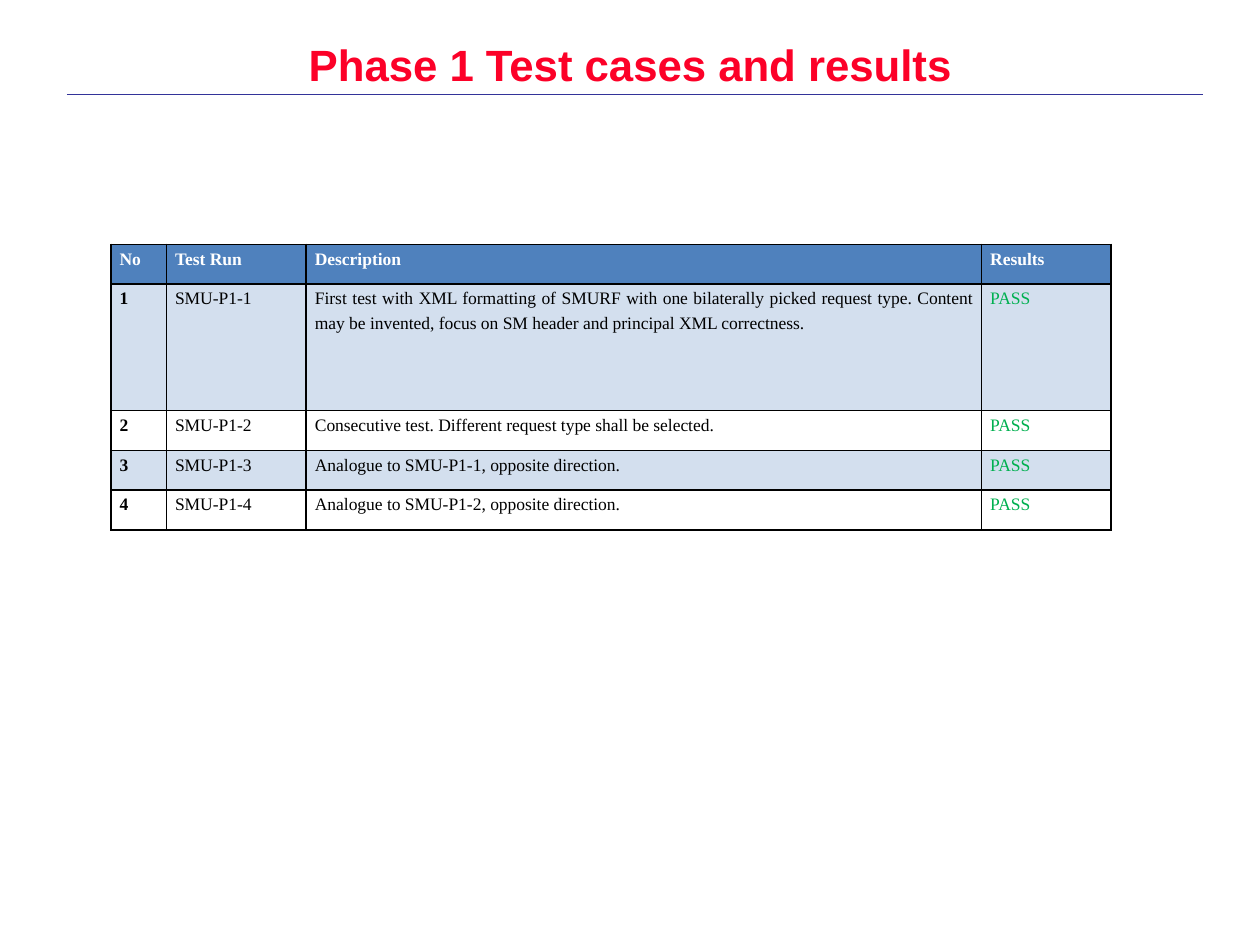
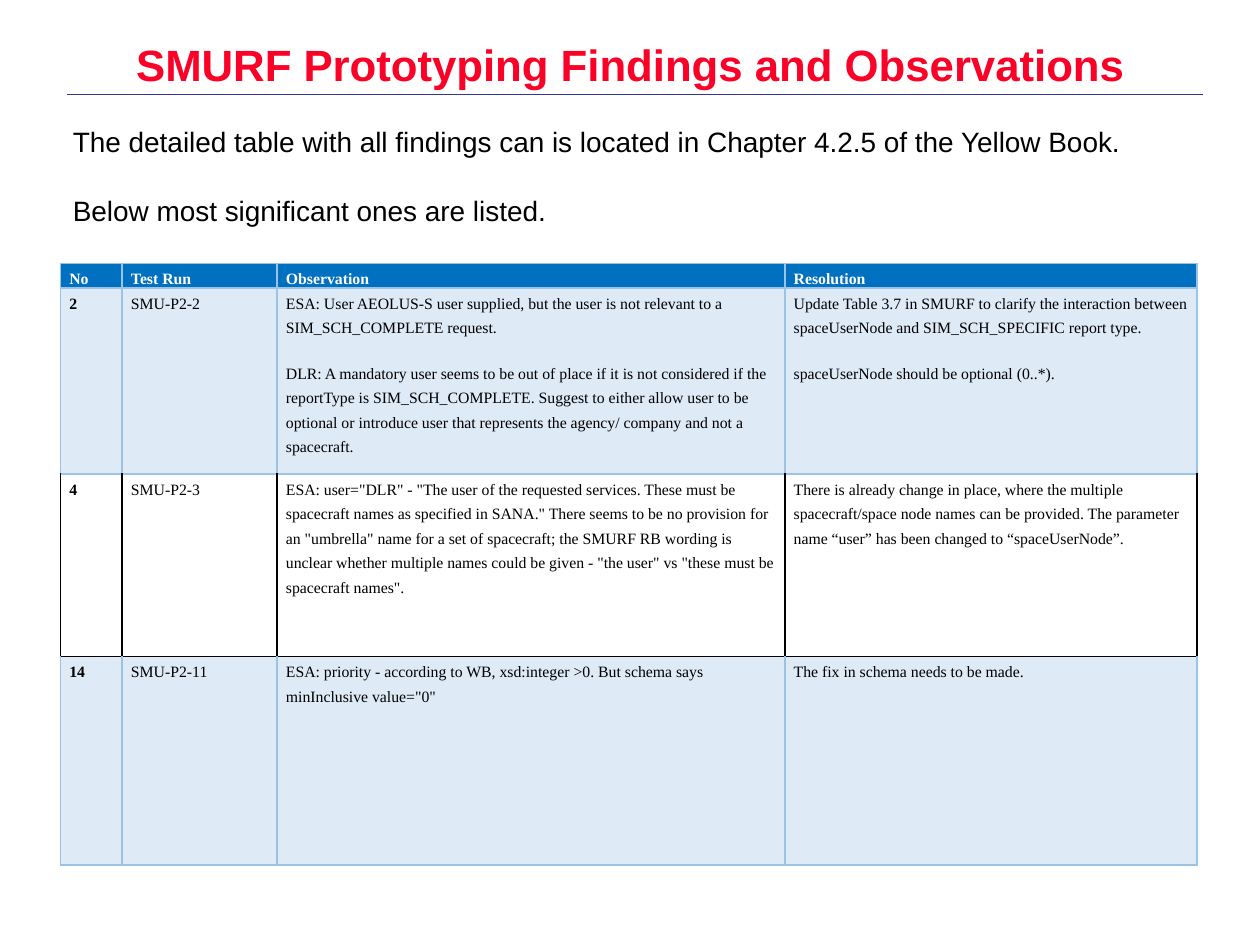
from dataclasses import dataclass
from typing import Optional

from lxml import etree
from pptx import Presentation
from pptx import util as u
from pptx.dml.color import RGBColor
from pptx.enum import shapes, text
from pptx.oxml import ns

SLIDE_WIDTH = u.Inches(10)
SLIDE_HEIGHT = u.Inches(7.5)

RED = RGBColor(0xFC, 0x01, 0x28)
NAVY = RGBColor(0x33, 0x33, 0x99)
BLACK = RGBColor(0x00, 0x00, 0x00)
WHITE = RGBColor(0xFF, 0xFF, 0xFF)
GREEN = RGBColor(0x00, 0xB0, 0x50)
STEEL_BLUE = RGBColor(0x4F, 0x81, 0xBD)
PALE_STEEL = RGBColor(0xD3, 0xDF, 0xEE)
STRONG_BLUE = RGBColor(0x00, 0x70, 0xC0)
SKY_BLUE = RGBColor(0x9C, 0xC2, 0xE5)
PALE_SKY = RGBColor(0xDE, 0xEA, 0xF6)

HEADING_FONT = "Arial"
TABLE_FONT = "Times New Roman"
LEFT = text.PP_ALIGN.LEFT
JUSTIFY = text.PP_ALIGN.JUSTIFY


@dataclass(frozen=True)
class TableStyle:
    font_size: int
    header_fill: RGBColor
    band_fill: RGBColor
    band_border: RGBColor
    plain_border: RGBColor
    alignments: tuple[text.PP_ALIGN, ...]
    last_column_color: RGBColor = BLACK


@dataclass(frozen=True)
class TableSpec:
    """Places and sizes are percentages of the slide's width or height."""
    left: float
    top: float
    columns: tuple[float, ...]
    rows: tuple[float, ...]
    style: TableStyle
    records: tuple[tuple[str, ...], ...]


@dataclass(frozen=True)
class PageSpec:
    title: str
    table: TableSpec
    intro: Optional[str] = None


TEST_RESULTS = TableSpec(
    left=8.8, top=25.87,
    columns=(4.4, 11.1, 53.6, 10.3),
    rows=(4.2, 13.4, 4.2, 4.2, 4.2),
    style=TableStyle(10, STEEL_BLUE, PALE_STEEL, BLACK, BLACK, (JUSTIFY,) * 4, GREEN),
    records=(
        ("No", "Test Run", "Description", "Results"),
        ("1", "SMU-P1-1",
         "First test with XML formatting of SMURF with one bilaterally picked request type. "
         "Content may be invented, focus on SM header and principal XML correctness.", "PASS"),
        ("2", "SMU-P1-2", "Consecutive test. Different request type shall be selected.", "PASS"),
        ("3", "SMU-P1-3", "Analogue to SMU-P1-1, opposite direction.", "PASS"),
        ("4", "SMU-P1-4", "Analogue to SMU-P1-2, opposite direction.", "PASS"),
    ),
)

FINDINGS = TableSpec(
    left=4.8, top=27.87,
    columns=(4.9, 12.3, 40.3, 32.7),
    rows=(2.6, 19.7, 19.3, 22.1),
    style=TableStyle(9, STRONG_BLUE, PALE_SKY, SKY_BLUE, BLACK,
                     (JUSTIFY, JUSTIFY, LEFT, LEFT)),
    records=(
        ("No", "Test Run", "Observation", "Resolution"),
        ("2", "SMU-P2-2",
         "ESA: User AEOLUS-S user supplied, but the user is not relevant to a "
         "SIM_SCH_COMPLETE request.\n"
         "DLR: A mandatory user seems to be out of place if it is not considered if the "
         "reportType is SIM_SCH_COMPLETE. Suggest to either allow user to be optional or "
         "introduce user that represents the agency/ company and not a spacecraft.",
         "Update Table 3.7 in SMURF to clarify the interaction between spaceUserNode and "
         "SIM_SCH_SPECIFIC report type.\n"
         "spaceUserNode should be optional (0..*)."),
        ("4", "SMU-P2-3",
         'ESA: user="DLR" - "The user of the requested services. These must be spacecraft '
         'names as specified in SANA." There seems to be no provision for an "umbrella" name '
         "for a set of spacecraft; the SMURF RB wording is unclear whether multiple names "
         'could be given - "the user" vs "these must be spacecraft names".',
         "There is already change in place, where the multiple spacecraft/space node names "
         "can be provided. The parameter name “user” has been changed to “spaceUserNode”."),
        ("14", "SMU-P2-11",
         "ESA: priority - according to WB, xsd:integer >0. But schema says "
         'minInclusive value="0"',
         "The fix in schema needs to be made."),
    ),
)

PAGES = (
    PageSpec("Phase 1 Test cases and results", TEST_RESULTS),
    PageSpec("SMURF Prototyping Findings and Observations", FINDINGS,
             "The detailed table with all findings can is located in Chapter 4.2.5 of the "
             "Yellow Book.\nBelow most significant ones are listed."),
)


def across(percent: float) -> u.Emu:
    return u.Emu(round(SLIDE_WIDTH * percent / 100))


def down(percent: float) -> u.Emu:
    return u.Emu(round(SLIDE_HEIGHT * percent / 100))


def format_runs(para, font_name: str, size: float, color: RGBColor, bold: bool = False) -> None:
    for span in para.runs:
        span.font.name = font_name
        span.font.size = u.Pt(size)
        span.font.bold = bold
        span.font.color.rgb = color


def add_title(page, title: str) -> None:
    box = page.shapes.title
    box.left, box.top, box.width, box.height = across(5), down(4), across(90), down(10.67)
    frame = box.text_frame
    frame.text = title
    frame.vertical_anchor = text.MSO_ANCHOR.TOP
    para = frame.paragraphs[0]
    para.alignment = text.PP_ALIGN.CENTER
    para.line_spacing = 0.9
    format_runs(para, HEADING_FONT, 25, RED, bold=True)


def add_title_rule(page) -> None:
    rule = page.shapes.add_connector(
        shapes.MSO_CONNECTOR.STRAIGHT, across(5.3), down(10), across(95.5), down(10))
    rule.line.color.rgb = NAVY
    rule.line.width = u.Pt(0.13)
    etree.SubElement(rule.element.spPr, ns.qn("a:effectLst"))


def add_intro(page, intro: str) -> None:
    box = page.shapes.add_textbox(across(4.8), down(12.53), across(86.2), down(12.13))
    frame = box.text_frame
    frame.text = intro
    frame.word_wrap = False
    for index, para in enumerate(frame.paragraphs):
        para.space_before = u.Pt(20 if index else 0)
        format_runs(para, HEADING_FONT, 16, BLACK)


def set_borders(cell, sides: dict[str, RGBColor]) -> None:
    """Draw 1 pt cell borders; sides maps L, R, T and B, in that order, to colours."""
    properties = cell._tc.get_or_add_tcPr()
    for position, (side, color) in enumerate(sides.items()):
        line = etree.Element(ns.qn(f"a:ln{side}"), w=str(u.Pt(1)))
        fill = etree.SubElement(line, ns.qn("a:solidFill"))
        etree.SubElement(fill, ns.qn("a:srgbClr"), val=str(color))
        properties.insert(position, line)


def fill_cell(cell, words: str, row: int, column: int, style: TableStyle) -> None:
    header, banded = row == 0, row % 2 == 1
    cell.margin_left = cell.margin_right = u.Inches(0.07)
    cell.margin_top = cell.margin_bottom = 0
    if header or banded:
        cell.fill.solid()
        cell.fill.fore_color.rgb = style.header_fill if header else style.band_fill
    else:
        cell.fill.background()

    color = BLACK
    if header:
        color = WHITE
    elif column == len(style.alignments) - 1:
        color = style.last_column_color
    cell.text_frame.text = words
    for index, para in enumerate(cell.text_frame.paragraphs):
        para.alignment = style.alignments[column]
        para.line_spacing = u.Pt(14)
        para.space_before = u.Pt(12 if index else 0)
        format_runs(para, TABLE_FONT, style.font_size, color, bold=header or column == 0)

    plain = not header and not banded
    side = style.plain_border if plain else style.band_border
    above_is_plain = banded and row > 1
    top = style.plain_border if above_is_plain else style.band_border
    set_borders(cell, {"L": side, "R": side, "T": top, "B": side})


def add_table(page, spec: TableSpec) -> None:
    table = page.shapes.add_table(
        len(spec.rows), len(spec.columns), across(spec.left), down(spec.top),
        across(sum(spec.columns)), down(sum(spec.rows))).table
    table.horz_banding = False
    for column, width in zip(table.columns, spec.columns):
        column.width = across(width)
    for row, height in zip(table.rows, spec.rows):
        row.height = down(height)
    for row, record in enumerate(spec.records):
        for column, words in enumerate(record):
            fill_cell(table.cell(row, column), words, row, column, spec.style)


def main() -> None:
    deck = Presentation()
    deck.slide_width, deck.slide_height = SLIDE_WIDTH, SLIDE_HEIGHT
    title_only = deck.slide_layouts.get_by_name("Title Only")
    for spec in PAGES:
        page = deck.slides.add_slide(title_only)
        add_title_rule(page)
        add_title(page, spec.title)
        if spec.intro:
            add_intro(page, spec.intro)
        add_table(page, spec.table)
    deck.save("out.pptx")


if __name__ == "__main__":
    main()
